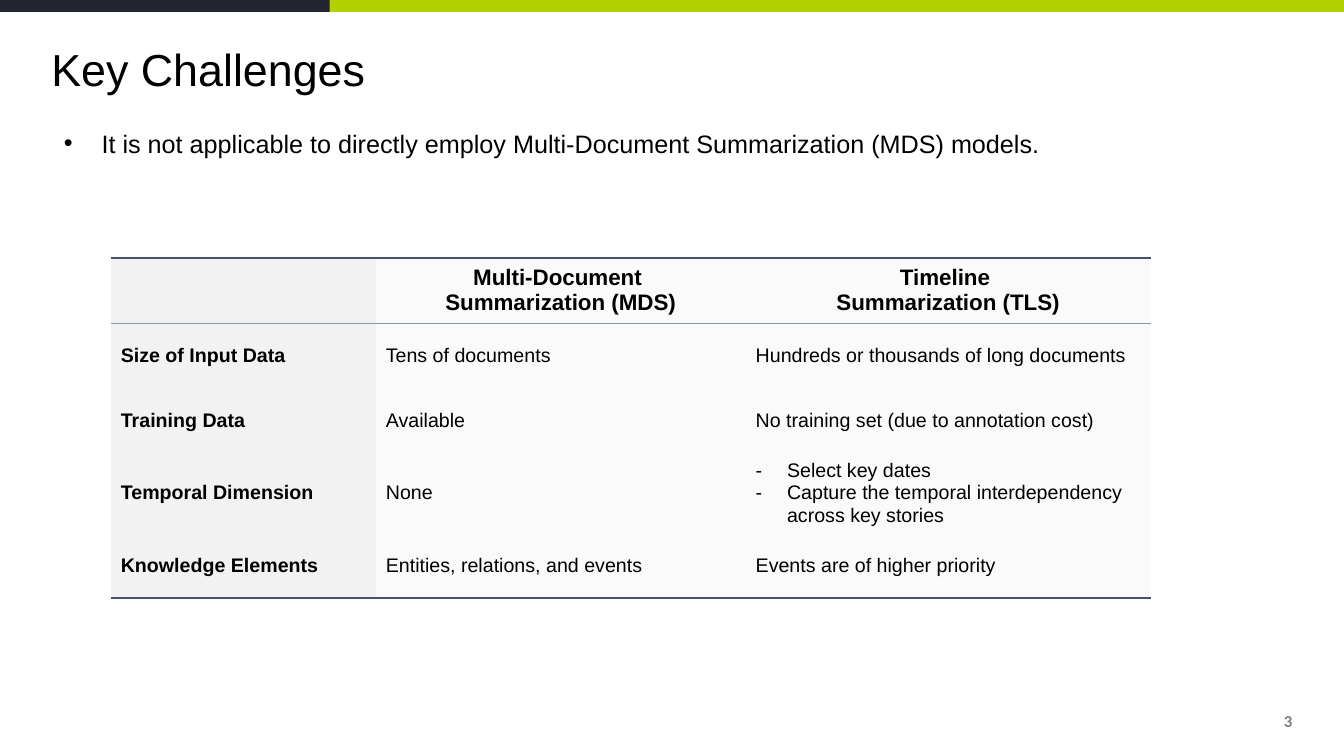
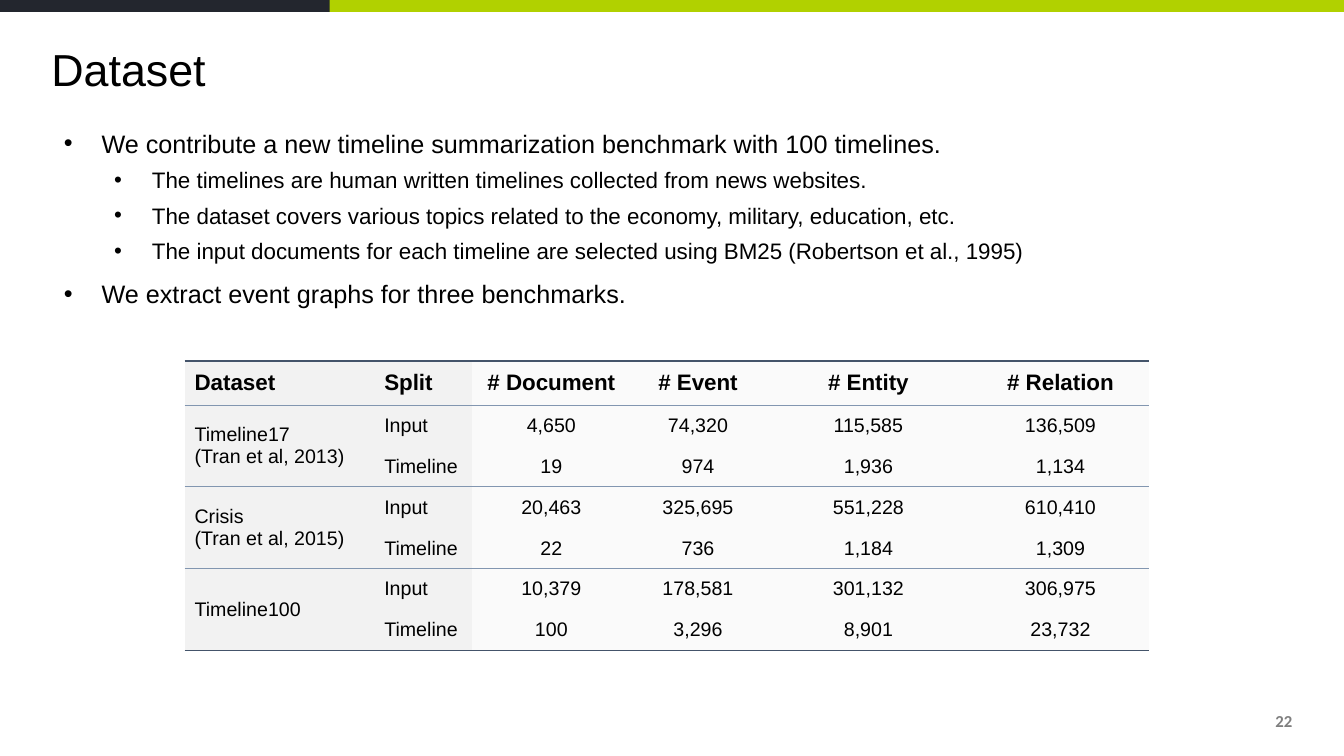
from lxml import etree
from pptx import Presentation
from pptx.dml.color import RGBColor
from pptx.enum.shapes import MSO_SHAPE
from pptx.enum.text import MSO_ANCHOR, MSO_AUTO_SIZE, PP_ALIGN
from pptx.oxml.ns import qn
from pptx.util import Cm, Pt

RECT = MSO_SHAPE.RECTANGLE
MIDDLE, TOP = MSO_ANCHOR.MIDDLE, MSO_ANCHOR.TOP
LEFT, CENTER, RIGHT = PP_ALIGN.LEFT, PP_ALIGN.CENTER, PP_ALIGN.RIGHT
FIXED = MSO_AUTO_SIZE.NONE

BLACK = RGBColor(0x00, 0x00, 0x00)
GREEN = RGBColor(0xB1, 0xD1, 0x00)
DARK = RGBColor(0x23, 0x26, 0x2E)
GREY = RGBColor(0x7F, 0x7F, 0x7F)
SIDE = RGBColor(0xF2, 0xF2, 0xF2)
PALE = RGBColor(0xFA, 0xFA, 0xFA)
THICK = (RGBColor(0x44, 0x54, 0x6A), 1.5)
THIN = (RGBColor(0x82, 0x96, 0xB0), 0.75)

WIDE, HIGH = 33.87, 19.05
BANDS = [(WIDE, GREEN), (8.31, DARK)]
BASE = {"name": "Arial", "size": Pt(14), "bold": False}
TITLE = {**BASE, "size": Pt(32)}
HEAD = {**BASE, "size": Pt(16), "bold": True}
LABEL = {**BASE, "bold": True}
FOOT = {"name": "Calibri", "size": Pt(12), "bold": True}
LEVELS = [
    {"size": 18, "left": 1.27, "gap": 10.5},
    {"size": 16, "left": 2.54, "gap": 6},
]
HANG = 0.95
DASH = 0.79

TASKS = [
    ["", "Multi-Document \vSummarization (MDS)", "Timeline \vSummarization (TLS)"],
    ["Size of Input Data", "Tens of documents", "Hundreds or thousands of long documents"],
    ["Training Data", "Available", "No training set (due to annotation cost)"],
    ["Temporal Dimension", "None",
     ["Select key dates", "Capture the temporal interdependency across key stories"]],
    ["Knowledge Elements", "Entities, relations, and events", "Events are of higher priority"],
]
COUNTS = [
    ["Dataset", "Split", "# Document", "# Event", "# Entity", "# Relation"],
    ["Timeline17\v(Tran et al, 2013)", "Input", "4,650", "74,320", "115,585", "136,509"],
    [None, "Timeline", "19", "974", "1,936", "1,134"],
    ["Crisis\v(Tran et al, 2015)", "Input", "20,463", "325,695", "551,228", "610,410"],
    [None, "Timeline", "22", "736", "1,184", "1,309"],
    ["Timeline100", "Input", "10,379", "178,581", "301,132", "306,975"],
    [None, "Timeline", "100", "3,296", "8,901", "23,732"],
]


def style(para, form, color=BLACK):
    for run in para.runs:
        for key, value in form.items():
            setattr(run.font, key, value)
        run.font.color.rgb = color
    for gap in para._p.findall(qn("a:br")):
        etree.SubElement(gap, qn("a:rPr")).set("sz", str(int(form["size"].pt * 100)))


def bullet(para, mark, left, hang):
    props = para._p.get_or_add_pPr()
    props.set("marL", str(Cm(left)))
    props.set("indent", str(-Cm(hang)))
    tint = etree.SubElement(props, qn("a:buClr"))
    etree.SubElement(tint, qn("a:srgbClr")).set("val", str(BLACK))
    etree.SubElement(props, qn("a:buFont")).set("typeface", "Arial")
    etree.SubElement(props, qn("a:buChar")).set("char", mark)


def next_para(frame, index):
    return frame.add_paragraph() if index else frame.paragraphs[0]


def add_box(slide, place, anchor):
    frame = slide.shapes.add_textbox(*map(Cm, place)).text_frame
    frame.word_wrap = True
    frame.vertical_anchor = anchor
    return frame


def add_bands(slide):
    for width, color in BANDS:
        band = slide.shapes.add_shape(RECT, 0, 0, Cm(width), Cm(0.3))
        band.shadow.inherit = False
        band.fill.solid()
        band.fill.fore_color.rgb = color
        band.line.fill.background()


def add_title(slide, text):
    title = slide.shapes.title
    title.left, title.top, title.width, title.height = map(Cm, (1.04, 1.02, 31.78, 1.57))
    frame = title.text_frame
    frame.auto_size = FIXED
    frame.vertical_anchor = MIDDLE
    para = frame.paragraphs[0]
    para.text = text
    para.alignment = LEFT
    para.line_spacing = 0.9
    style(para, TITLE)


def add_number(slide, text):
    para = add_box(slide, (25.2, 17.65, 7.62, 1.02), MIDDLE).paragraphs[0]
    para.text = text
    para.alignment = RIGHT
    style(para, FOOT, GREY)


def add_points(slide, points):
    frame = add_box(slide, (1.04, 3.1, 31.78, 14.07), TOP)
    for index, (level, text) in enumerate(points):
        rule = LEVELS[level]
        para = next_para(frame, index)
        para.text = text
        para.level = level
        bullet(para, "•", rule["left"], HANG)
        para.space_before = Pt(rule["gap"] if index else 0)
        style(para, {**BASE, "size": Pt(rule["size"])})


def add_edge(cell, side, line):
    props = cell._tc.get_or_add_tcPr()
    edge = etree.SubElement(props, qn("a:ln" + side))
    if line is None:
        etree.SubElement(edge, qn("a:noFill"))
        return
    color, width = line
    edge.set("w", str(Pt(width)))
    fill = etree.SubElement(edge, qn("a:solidFill"))
    etree.SubElement(fill, qn("a:srgbClr")).set("val", str(color))


def paint(cell, color, top, bottom):
    for side, line in (("L", None), ("R", None), ("T", top), ("B", bottom)):
        add_edge(cell, side, line)
    cell.fill.solid()
    cell.fill.fore_color.rgb = color
    cell.vertical_anchor = MIDDLE


def write(cell, content, form, align):
    listed = isinstance(content, list)
    for index, text in enumerate(content if listed else [content]):
        para = next_para(cell.text_frame, index)
        para.text = text
        para.alignment = align
        if listed:
            bullet(para, "-", DASH, DASH)
        style(para, form)


def add_grid(slide, place, widths, heights, data, lines, sides, label, align):
    size = (sum(widths), sum(heights))
    frame = slide.shapes.add_table(len(data), len(widths), *map(Cm, place + size))
    grid = frame.table
    grid.first_row = grid.horz_banding = False
    for column, width in zip(grid.columns, widths):
        column.width = Cm(width)
    for row, height in zip(grid.rows, heights):
        row.height = Cm(height)
    for r, row in enumerate(data):
        if row[0] is None:
            grid.cell(r - 1, 0).merge(grid.cell(r, 0))
    for r, row in enumerate(data):
        for c, content in enumerate(row):
            cell = grid.cell(r, c)
            span = cell.span_height if cell.is_merge_origin else 1
            aside = c < sides
            paint(cell, SIDE if aside else PALE, lines.get(r), lines.get(r + span))
            if content is None:
                continue
            form = HEAD if r == 0 else label if aside else BASE
            place_to = LEFT if aside else CENTER if r == 0 else align
            write(cell, content, form, place_to)


def add_page(deck, title, number, points):
    slide = deck.slides.add_slide(deck.slide_layouts[5])
    add_bands(slide)
    add_title(slide, title)
    add_points(slide, points)
    add_number(slide, number)
    return slide


def main():
    deck = Presentation()
    deck.slide_width, deck.slide_height = Cm(WIDE), Cm(HIGH)

    slide = add_page(deck, "Key Challenges", "3", [
        (0, "It is not applicable to directly employ Multi-Document Summarization (MDS) models."),
    ])
    add_grid(slide, (2.79, 6.5), [6.68, 9.32, 10.21], [1.65, 1.63, 1.63, 1.83, 1.63],
             TASKS, {0: THICK, 1: THIN, 5: THICK}, 1, LABEL, LEFT)

    slide = add_page(deck, "Dataset", "22", [
        (0, "We contribute a new timeline summarization benchmark with 100 timelines."),
        (1, "The timelines are human written timelines collected from news websites."),
        (1, "The dataset covers various topics related to the economy, military, education, etc."),
        (1, "The input documents for each timeline are selected using BM25 (Robertson et al., 1995)"),
        (0, "We extract event graphs for three benchmarks."),
    ])
    add_grid(slide, (4.65, 9.09), [4.78, 2.46, 4.01, 3.38, 5.21, 4.47], [1.12] + [1.03] * 6,
             COUNTS, {0: THICK, 1: THIN, 3: THIN, 5: THIN, 7: THICK}, 2, BASE, CENTER)

    deck.save("out.pptx")


if __name__ == "__main__":
    main()
